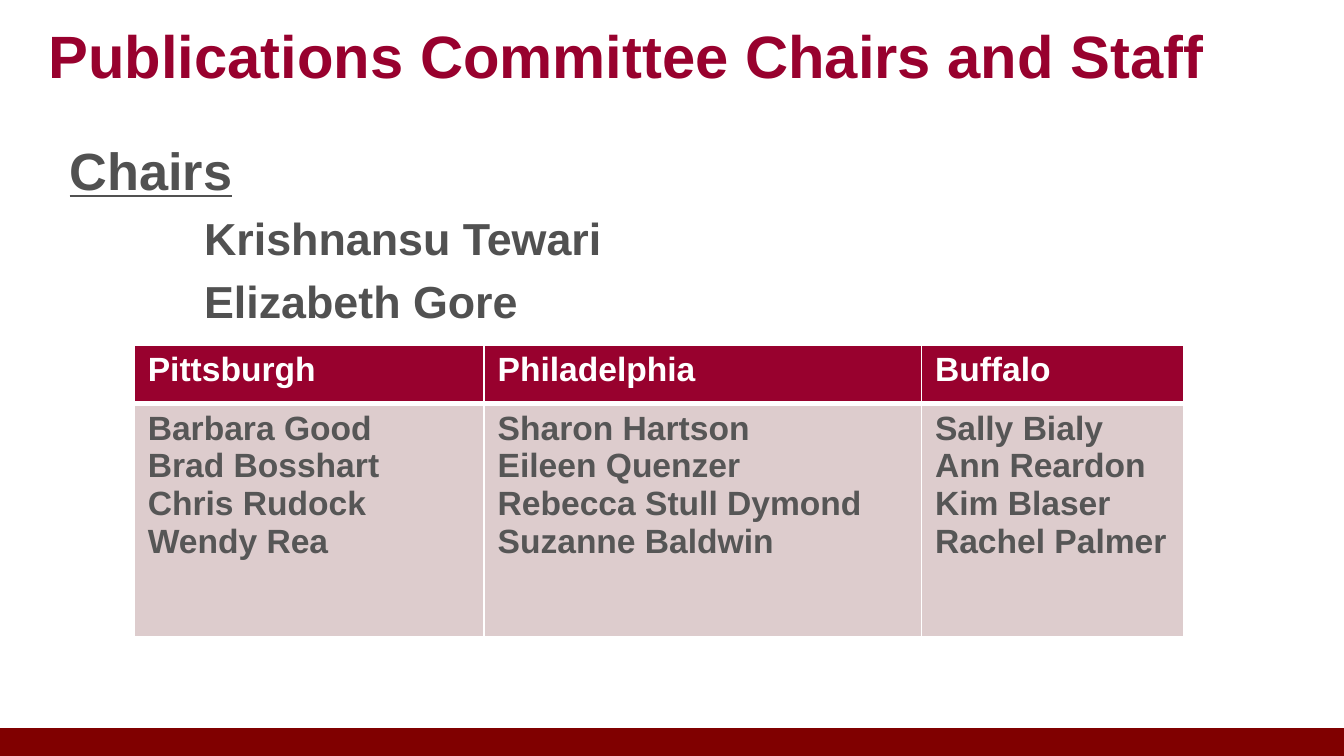
from lxml import etree
from pptx import Presentation
from pptx import util as u
from pptx.dml import color
from pptx.enum import shapes, text
from pptx.oxml import ns

WIDTH = u.Inches(10)
HEIGHT = WIDTH * 9 // 16
FONT = "Arial"
COLORS = {
    "crimson": "98012E",
    "maroon": "800000",
    "gray": "515151",
    "cell_text": "565656",
    "cell": "DDCCCD",
    "white": "FFFFFF",
}
STAFF = {
    "Pittsburgh": ["Barbara Good", "Brad Bosshart", "Chris Rudock", "Wendy Rea"],
    "Philadelphia": ["Sharon Hartson", "Eileen Quenzer", "Rebecca Stull Dymond", "Suzanne Baldwin"],
    "Buffalo": ["Sally Bialy", "Ann Reardon Kim Blaser Rachel Palmer"],
}
CHAIRS = ["Krishnansu Tewari", "Elizabeth Gore"]
COLUMN_SHARES = (4 / 12, 5 / 12, 3 / 12)
ROW_SHARES = (0.2, 0.8)


def rgb(name):
    return color.RGBColor.from_string(COLORS[name])


def region(*percents):
    return [int(percent * size / 100) for percent, size in
            zip(percents, (WIDTH, HEIGHT, WIDTH, HEIGHT))]


def style(para, size, tone):
    for span in para.runs:
        span.font.name = FONT
        span.font.size = u.Pt(size)
        span.font.bold = True
        span.font.color.rgb = rgb(tone)


def add_text(page, area, lines):
    frame = page.shapes.add_textbox(*area).text_frame
    frame.word_wrap = True
    frame.text = "\n".join(lines)
    return frame.paragraphs


def add_title(page, area):
    para, = add_text(page, area, ["Publications Committee Chairs and Staff"])
    para.alignment = text.PP_ALIGN.CENTER
    style(para, 32, "crimson")


def add_chairs(page, area):
    heading, *names = add_text(page, area, ["Chairs", *CHAIRS])
    style(heading, 28, "gray")
    heading.runs[0].font.underline = True
    for para in names:
        para._p.get_or_add_pPr().set("marL", str(u.Inches(1)))
        para.space_before = u.Pt(5)
        style(para, 24, "gray")


def add_borders(cell, bottom):
    properties = cell._tc.get_or_add_tcPr()
    widths = {"lnL": 1, "lnR": 1, "lnT": 1, "lnB": bottom}
    for index, (side, width) in enumerate(widths.items()):
        line = etree.Element(ns.qn(f"a:{side}"), w=str(u.Pt(width)))
        fill = etree.SubElement(line, ns.qn("a:solidFill"))
        etree.SubElement(fill, ns.qn("a:srgbClr"), val=COLORS["white"])
        properties.insert(index, line)


def fill_cell(cell, lines, background, tone, bottom):
    cell.fill.solid()
    cell.fill.fore_color.rgb = rgb(background)
    add_borders(cell, bottom)
    cell.text_frame.text = "\n".join(lines)
    for para in cell.text_frame.paragraphs:
        style(para, 18, tone)


def add_staff(page, area):
    table = page.shapes.add_table(len(ROW_SHARES), len(STAFF), *area).table
    for column, share in zip(table.columns, COLUMN_SHARES):
        column.width = int(area[2] * share)
    for row, share in zip(table.rows, ROW_SHARES):
        row.height = int(area[3] * share)
    for index, (city, names) in enumerate(STAFF.items()):
        fill_cell(table.cell(0, index), [city], "crimson", "white", 3)
        fill_cell(table.cell(1, index), names, "cell", "cell_text", 1)


def add_footer(page, area):
    bar = page.shapes.add_shape(shapes.MSO_SHAPE.RECTANGLE, *area)
    bar.shadow.inherit = False
    bar.fill.solid()
    bar.fill.fore_color.rgb = rgb("maroon")
    bar.line.fill.background()


def main():
    deck = Presentation()
    deck.slide_width, deck.slide_height = WIDTH, HEIGHT
    page = deck.slides.add_slide(deck.slide_layouts[6])
    add_footer(page, region(0, 96.3, 100, 3.7))
    add_title(page, region(0, 1.6, 93.3, 10))
    add_chairs(page, region(4.2, 17.4, 88.3, 24))
    add_staff(page, region(10, 45.6, 78.1, 38.6))
    deck.save("out.pptx")


if __name__ == "__main__":
    main()
